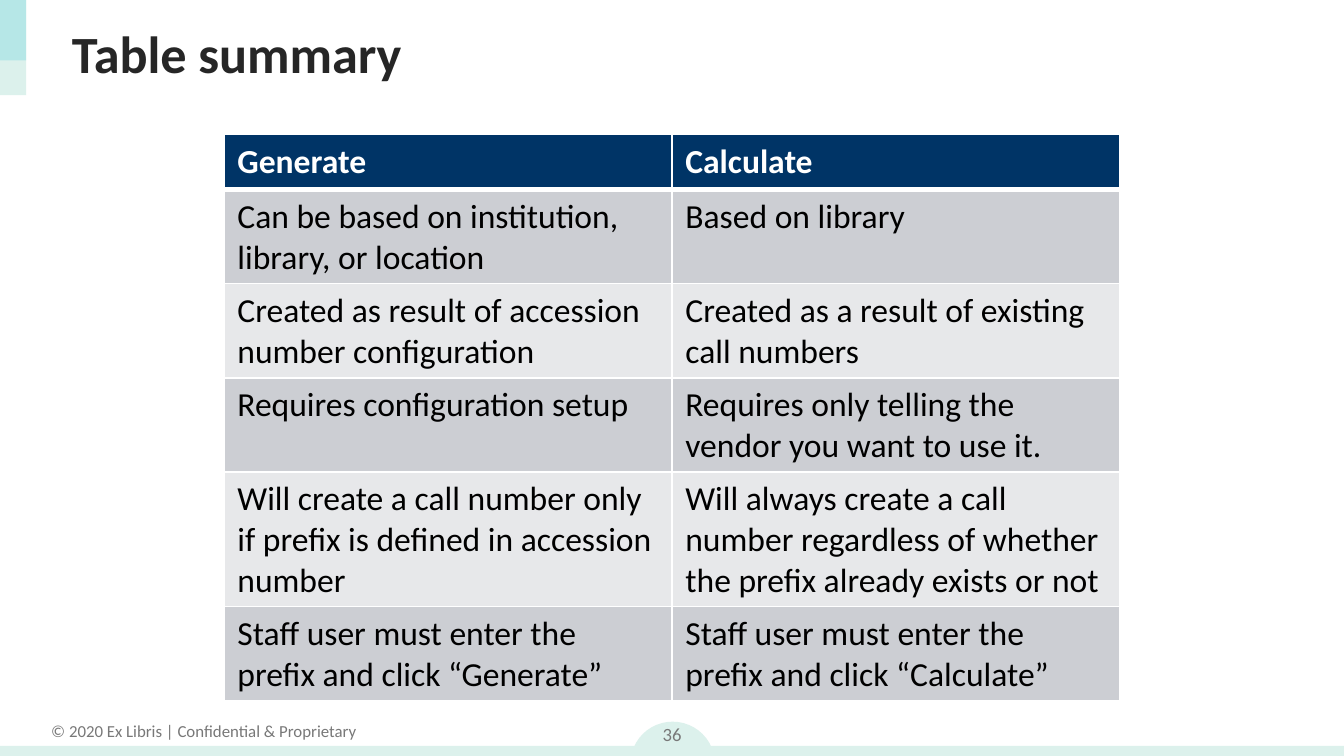
import pptx
import pptx.util
import pptx.dml.color
import pptx.enum.shapes
import pptx.enum.text
import pptx.oxml
import pptx.oxml.ns

deck = pptx.Presentation()
deck.slide_width = pptx.util.Inches(10)
deck.slide_height = deck.slide_width * 9 // 16
column = deck.slide_width / 100
row = deck.slide_height / 100
slide = deck.slides.add_slide(deck.slide_layouts[5])


def area(left, top, width, height):
    return int(left * column), int(top * row), int(width * column), int(height * row)


def style(paragraph, size, colour, bold=False):
    paragraph.font.name = "Calibri"
    paragraph.font.size = pptx.util.Pt(size)
    paragraph.font.bold = bold
    paragraph.font.color.rgb = pptx.dml.color.RGBColor.from_string(colour)


shapes = pptx.enum.shapes.MSO_SHAPE
for outline, place, colour, opacity in [
    (shapes.OVAL, (46.9, 95.47, 6.3, 11.2), "DCF1EC", 100),
    (shapes.RECTANGLE, (0, 98.67, 100, 1.96), "DCF1EC", 100),
    (shapes.RECTANGLE, (0, 0, 1.95, 12.6), "DCF1EC", 100),
    (shapes.RECTANGLE, (0, 0, 1.95, 8), "50CFDA", 27),
]:
    accent = slide.shapes.add_shape(outline, *area(*place))
    accent.shadow.inherit = False
    accent.line.fill.background()
    accent.fill.solid()
    accent.fill.fore_color.rgb = pptx.dml.color.RGBColor.from_string(colour)
    if opacity < 100:
        tint = accent.fill._xPr.find(".//" + pptx.oxml.ns.qn("a:srgbClr"))
        tint.append(pptx.oxml.parse_xml(
            f'<a:alpha {pptx.oxml.ns.nsdecls("a")} val="{opacity * 1000}"/>'))

for wording, place, size, wrap, anchor in [
    ("© 2020 Ex Libris | Confidential & Proprietary", (2.7, 94.5, 24.9, 4.44), 9,
     False, pptx.enum.text.MSO_ANCHOR.TOP),
    ("36", (47.05, 93.55, 5.9, 7.11), 10, True, pptx.enum.text.MSO_ANCHOR.MIDDLE),
]:
    footer = slide.shapes.add_textbox(*area(*place)).text_frame
    footer.word_wrap = wrap
    footer.vertical_anchor = anchor
    footer.text = wording
    footer.paragraphs[0].alignment = pptx.enum.text.PP_ALIGN.CENTER
    style(footer.paragraphs[0], size, "787878")

title = slide.shapes.title
title.left, title.top, title.width, title.height = area(4.35, 1.42, 92.1, 11.2)
title.text_frame.text = "Table summary"
title.text_frame.vertical_anchor = pptx.enum.text.MSO_ANCHOR.MIDDLE
title.text_frame.paragraphs[0].alignment = pptx.enum.text.PP_ALIGN.LEFT
style(title.text_frame.paragraphs[0], 28, "262626", True)

comparison = [
    ("Generate", "Calculate"),
    ("Can be based on institution, library, or location", "Based on library"),
    ("Created as result of accession number configuration",
     "Created as a result of existing call numbers"),
    ("Requires configuration setup", "Requires only telling the vendor you want to use it."),
    ("Will create a call number only if prefix is defined in accession number",
     "Will always create a call number regardless of whether the prefix already exists or not"),
    ("Staff user must enter the prefix and click “Generate”",
     "Staff user must enter the prefix and click “Calculate”"),
]
frame = slide.shapes.add_table(
    len(comparison), 2, *area(100 / 6, 17.78, 200 / 3, 7.29 * len(comparison)))
frame.height = int(74.84 * row)
summary = frame.table

for index, entries in enumerate(comparison):
    header = index == 0
    fill = "003466" if header else ("E7E8EA", "CCCED3")[index % 2]
    borders = {"lnL": 1, "lnR": 1, "lnT": 1, "lnB": 3 if header else 1}
    if index == 1:
        del borders["lnT"]
    for cell, entry in zip(summary.rows[index].cells, entries):
        cell.text = entry
        style(cell.text_frame.paragraphs[0], 18, "FFFFFF" if header else "000000", header)
        properties = cell._tc.get_or_add_tcPr()
        for side, weight in borders.items():
            properties.append(pptx.oxml.parse_xml(
                f'<a:{side} {pptx.oxml.ns.nsdecls("a")} w="{pptx.util.Pt(weight)}">'
                f'<a:solidFill><a:srgbClr val="FFFFFF"/></a:solidFill></a:{side}>'))
        cell.fill.solid()
        cell.fill.fore_color.rgb = pptx.dml.color.RGBColor.from_string(fill)

deck.save("out.pptx")
